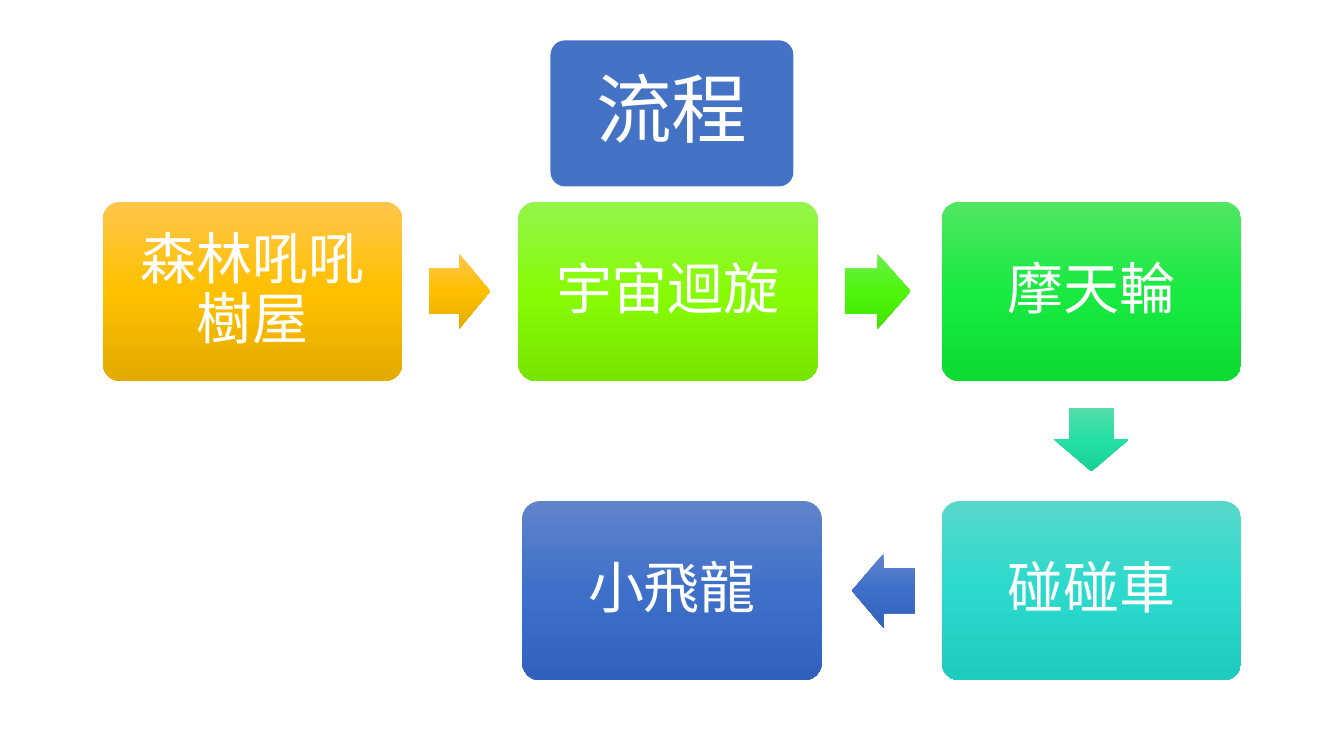
from lxml.etree import SubElement
from pptx import Presentation
from pptx.dml.color import RGBColor
from pptx.enum.shapes import MSO_SHAPE
from pptx.enum.text import MSO_ANCHOR, MSO_AUTO_SIZE, PP_ALIGN
from pptx.oxml.ns import qn
from pptx.util import Inches, Pt


def paint(shape, *hues):
    """Fill with one colour, or with an even top-to-bottom gradient."""
    shape.shadow.inherit = False
    shape.line.fill.background()
    if len(hues) == 1:
        shape.fill.solid()
        shape.fill.fore_color.rgb = RGBColor.from_string(hues[0])
        return
    shape.fill.gradient()
    shape.fill.gradient_angle = 270
    grad = shape.element.spPr.find(qn("a:gradFill"))
    grad.set("rotWithShape", "0")
    stops = grad.find(qn("a:gsLst"))
    stops.clear()
    for i, hue in enumerate(hues):
        stop = SubElement(stops, qn("a:gs"), pos=str(i * 100000 // (len(hues) - 1)))
        SubElement(stop, qn("a:srgbClr"), val=hue)


def write(shape, text, size, inset):
    """Set white centred text with equal insets."""
    frame = shape.text_frame
    frame.text = text
    look = {"word_wrap": True, "auto_size": MSO_AUTO_SIZE.NONE,
            "vertical_anchor": MSO_ANCHOR.MIDDLE}
    for side in ("left", "top", "right", "bottom"):
        look["margin_" + side] = Inches(inset)
    for key, value in look.items():
        setattr(frame, key, value)
    para = frame.paragraphs[0]
    para.alignment = PP_ALIGN.CENTER
    para.line_spacing = 0.9
    font = para.runs[0].font
    font.name = "Calibri"
    font.size = Pt(size)
    font.color.rgb = RGBColor.from_string("FFFFFF")


deck = Presentation()
deck.slide_width, deck.slide_height = Inches(13.33), Inches(7.5)
slide = deck.slides.add_slide(deck.slide_layouts[5])
shapes = slide.shapes

# Title on its blue card
card = shapes.add_shape(MSO_SHAPE.ROUNDED_RECTANGLE,
                        Inches(5.46), Inches(0.4), Inches(2.41), Inches(1.45))
card.adjustments[0] = 0.1
paint(card, "4472C4")
title = shapes.title
title.left, title.top = Inches(5.5), Inches(0.44)
title.width, title.height = Inches(2.33), Inches(1.36)
write(title, "流程", 54, 0.23)
card.element.addnext(title.element)

# Ride cards: text, left, top, gradient
gold = ("FFC64B", "FFC000", "E3AB00")
blue = ("6183CB", "3E70CA", "3062BB")
upper, lower = 2, 4.97
rides = [
    ("森林吼吼樹屋", 1.02, upper, gold),
    ("宇宙迴旋", 5.14, upper, ("94F44C", "87FB06", "78E500")),
    ("摩天輪", 9.34, upper, ("51E663", "19EA42", "0CDB34")),
    ("碰碰車", 9.34, lower, ("58D8CC", "2BDACC", "1ECBBD")),
    ("小飛龍", 5.18, lower, blue),
]
for text, left, top, hues in rides:
    ride = shapes.add_shape(MSO_SHAPE.ROUNDED_RECTANGLE,
                            Inches(left), Inches(top), Inches(2.97), Inches(1.78))
    ride.adjustments[0] = 0.1
    paint(ride, *hues)
    write(ride, text, 40, 0.22)

# Arrows between rides: left, top, width, turn, gradient
arrows = [
    (4.25, 2.52, 0.61, 0, gold),
    (8.38, 2.52, 0.65, 0, ("6BEF4D", "4FF50D", "41E500")),
    (10.51, 3.99, 0.63, 90, ("55DDAB", "25E0A4", "18D095")),
    (8.45, 5.49, 0.63, 180, blue),
]
for left, top, width, turn, hues in arrows:
    arrow = shapes.add_shape(MSO_SHAPE.RIGHT_ARROW,
                             Inches(left), Inches(top), Inches(width), Inches(0.74))
    arrow.adjustments[0], arrow.adjustments[1] = 0.6, 0.5
    arrow.rotation = turn
    paint(arrow, *hues)

deck.save("out.pptx")
